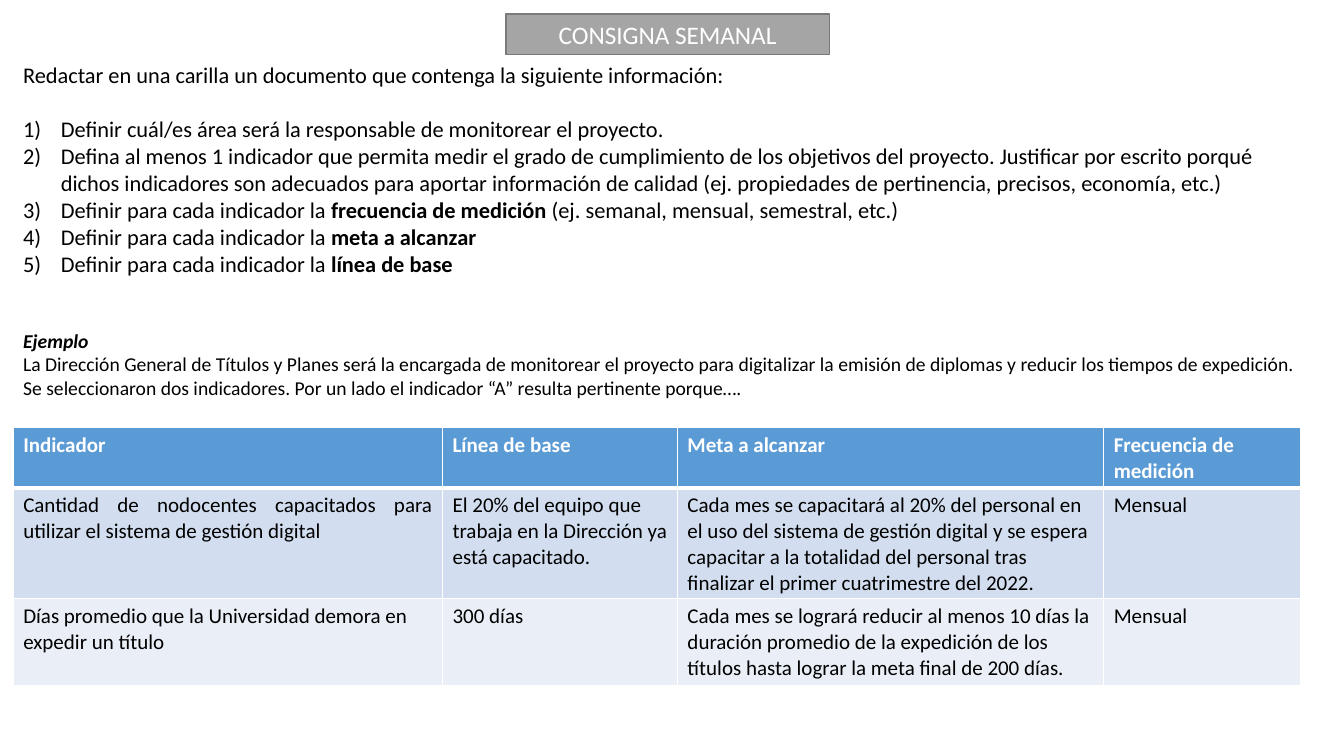
from dataclasses import dataclass

from lxml.etree import SubElement
from pptx import Presentation
from pptx.dml.color import RGBColor as RGB
from pptx.enum.shapes import MSO_SHAPE as SHAPE
from pptx.enum.text import MSO_ANCHOR as ANCHOR, PP_ALIGN as ALIGN
from pptx.oxml.ns import qn
from pptx.util import Pt


@dataclass(frozen=True)
class Theme:
    font: str = "Calibri"
    black: str = "000000"
    white: str = "FFFFFF"
    title_fill: str = "A5A5A5"
    title_line: str = "7A7A7A"
    header: str = "5B9BD5"
    bands: tuple = ("D2DEEF", "EAEFF7")
    title_size: int = 18
    body_size: int = 16
    table_size: int = 15
    example_size: int = 14


T = Theme()

INTRO = "Redactar en una carilla un documento que contenga la siguiente información:"
# Each task is a list of runs; every second run is bold
TASKS = [
    ["Definir cuál/es área será la responsable de monitorear el proyecto."],
    ["Defina al menos 1 indicador que permita medir el grado de cumplimiento de los "
     "objetivos del proyecto. Justificar por escrito porqué dichos indicadores son "
     "adecuados para aportar información de calidad (ej. propiedades de pertinencia, "
     "precisos, economía, etc.)"],
    ["Definir para cada indicador la ", "frecuencia de medición ",
     "(ej. semanal, mensual, semestral, etc.)"],
    ["Definir para cada indicador la ", "meta a alcanzar"],
    ["Definir para cada indicador la ", "línea de base"],
]
EXAMPLE = [
    "La Dirección General de Títulos y Planes será la encargada de monitorear el "
    "proyecto para digitalizar la emisión de diplomas y reducir los tiempos de expedición.",
    "Se seleccionaron dos indicadores. Por un lado el indicador “A” resulta pertinente porque….",
]
INDICATORS = [
    ["Indicador", "Línea de base", "Meta a alcanzar", "Frecuencia de medición"],
    ["Cantidad de nodocentes capacitados para utilizar el sistema de gestión digital",
     "El 20% del equipo que trabaja en la Dirección ya está capacitado.",
     "Cada mes se capacitará al 20% del personal en el uso del sistema de gestión "
     "digital y se espera capacitar a la totalidad del personal tras finalizar el "
     "primer cuatrimestre del 2022.",
     "Mensual"],
    ["Días promedio que la Universidad demora en expedir un título",
     "300 días",
     "Cada mes se logrará reducir al menos 10 días la duración promedio de la "
     "expedición de los títulos hasta lograr la meta final de 200 días.",
     "Mensual"],
]
COL_SHARES = (0.33, 0.18, 0.33, 0.15)
COL_WIDTHS = (306.7, 167.8, 304.5, 140.4)
ROW_HEIGHTS = (42.8, 79, 61.8)


def write(p, text, size=T.body_size, color=T.black, bold=False, italic=False):
    r = p.add_run()
    r.text = text
    f = r.font
    f.name, f.size, f.bold, f.italic = T.font, Pt(size), bold, italic
    f.color.rgb = RGB.from_string(color)


def text_frame(slide, box):
    tf = slide.shapes.add_textbox(*map(Pt, box)).text_frame
    tf.word_wrap = True
    return tf


def number(p, indent):
    pPr = p._p.get_or_add_pPr()
    pPr.set("marL", str(Pt(indent)))
    pPr.set("indent", str(-Pt(indent)))
    SubElement(pPr, qn("a:buFont"), typeface="+mj-lt")
    SubElement(pPr, qn("a:buAutoNum"), type="arabicParenR")


def border(cell, bottom):
    tcPr = cell._tc.get_or_add_tcPr()
    for side, width in (("L", 1), ("R", 1), ("T", 1), ("B", bottom)):
        ln = SubElement(tcPr, qn("a:ln" + side), w=str(Pt(width)))
        fill = SubElement(ln, qn("a:solidFill"))
        SubElement(fill, qn("a:srgbClr"), val=T.white)


# Title bar
def add_title(slide, box):
    sp = slide.shapes.add_shape(SHAPE.RECTANGLE, *map(Pt, box))
    sp.shadow.inherit = False
    sp.fill.solid()
    sp.fill.fore_color.rgb = RGB.from_string(T.title_fill)
    sp.line.color.rgb = RGB.from_string(T.title_line)
    sp.line.width = Pt(1)
    tf = sp.text_frame
    tf.word_wrap = True
    tf.vertical_anchor = ANCHOR.MIDDLE
    p = tf.paragraphs[0]
    p.alignment = ALIGN.CENTER
    write(p, "CONSIGNA SEMANAL", size=T.title_size, color=T.white)


# Introduction and numbered tasks
def add_tasks(slide, box):
    tf = text_frame(slide, box)
    p = tf.paragraphs[0]
    p.space_after = Pt(19.5)
    write(p, INTRO)
    for runs in TASKS:
        p = tf.add_paragraph()
        number(p, 27)
        for i, text in enumerate(runs):
            write(p, text, bold=i % 2 == 1)


# Worked example
def add_example(slide, box):
    tf = text_frame(slide, box)
    write(tf.paragraphs[0], "Ejemplo", size=T.example_size, bold=True, italic=True)
    for text in EXAMPLE:
        write(tf.add_paragraph(), text, size=T.example_size)


# Indicator table
def add_indicators(slide, box):
    table = slide.shapes.add_table(len(INDICATORS), len(COL_WIDTHS), *map(Pt, box)).table
    for col, width in zip(table.columns, COL_WIDTHS):
        col.width = Pt(width)
    for row, height in zip(table.rows, ROW_HEIGHTS):
        row.height = Pt(height)
    for i, texts in enumerate(INDICATORS):
        head = i == 0
        for j, text in enumerate(texts):
            cell = table.cell(i, j)
            border(cell, bottom=3 if head else 1)
            cell.fill.solid()
            cell.fill.fore_color.rgb = RGB.from_string(T.header if head else T.bands[i - 1])
            write(cell.text_frame.paragraphs[0], text, size=T.table_size,
                  color=T.white if head else T.black, bold=head)
    table.cell(1, 0).text_frame.paragraphs[0].alignment = ALIGN.JUSTIFY


def main():
    prs = Presentation()
    prs.slide_width, prs.slide_height = Pt(960), Pt(540)
    slide = prs.slides.add_slide(prs.slide_layouts[6])
    left, width = 9.4, 934.6
    add_title(slide, (361.4, 10, 231, 29))
    add_tasks(slide, (left, 40.3, width, 162.7))
    add_indicators(slide, (left, 305.3, sum(COL_WIDTHS), sum(ROW_HEIGHTS)))
    add_example(slide, (left, 231.1, width, 80))
    prs.save("out.pptx")


if __name__ == "__main__":
    main()
